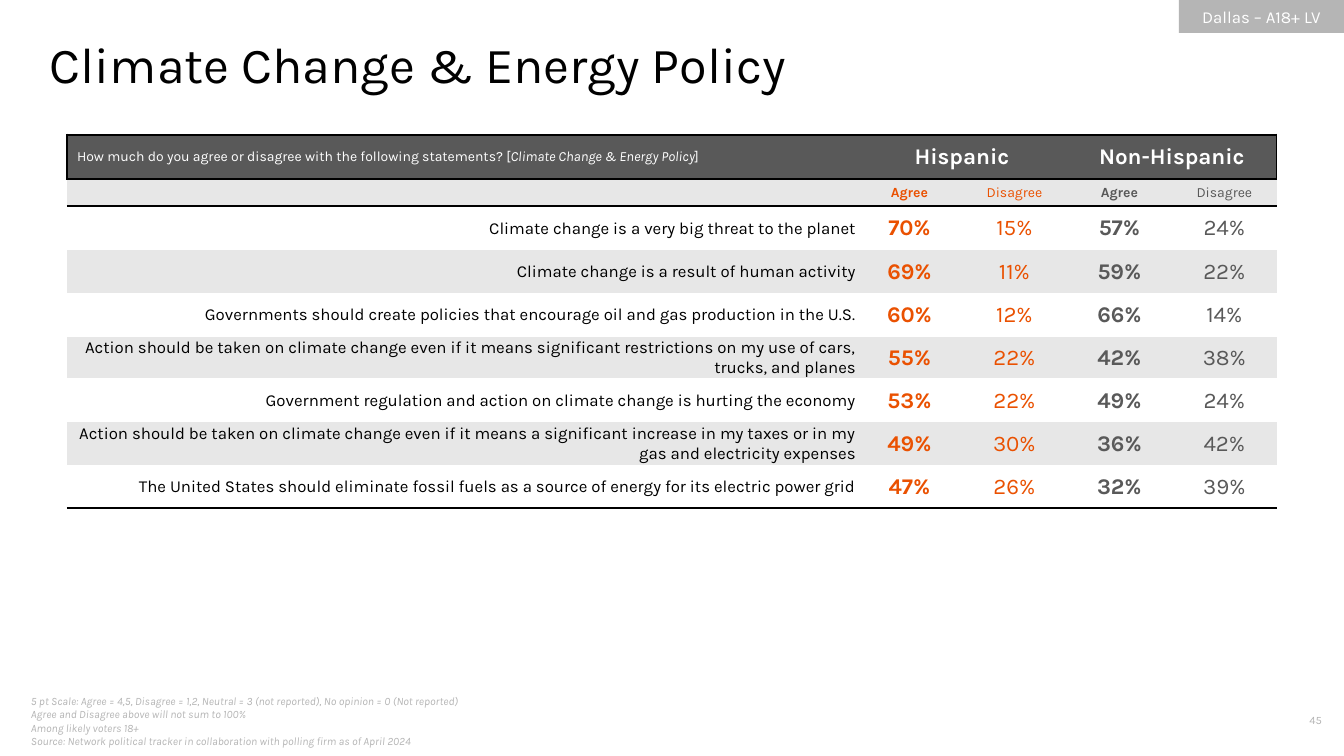
from dataclasses import dataclass
from lxml.etree import SubElement
from pptx import Presentation
from pptx.dml.color import RGBColor
from pptx.enum.shapes import MSO_SHAPE
from pptx.enum.text import MSO_ANCHOR as ANCHOR, PP_ALIGN as ALIGN
from pptx.oxml.ns import qn
from pptx.util import Emu, Pt

TITLE = "Climate Change & Energy Policy"
AUDIENCE = "Dallas – A18+ LV"
PAGE = "45"
NOTES = [
    ["5 pt Scale: Agree = 4,5, Disagree = 1,2, Neutral = 3 (not reported), No opinion = 0 (Not reported)"],
    ["Agree and Disagree above will not sum to 100%"],
    ["Among likely voters 18+",
     "Source: Network political tracker in collaboration with polling firm as of April 2024"],
]
QUESTION = [
    ("How much do you agree or disagree with the following statements? [", False),
    (TITLE, True),
    ("]", False),
]
GROUPS = ["Hispanic", "Non-Hispanic"]
ANSWERS = ["Agree", "Disagree"] * len(GROUPS)
STATEMENTS = [
    ("Climate change is a very big threat to the planet", 70, 15, 57, 24),
    ("Climate change is a result of human activity", 69, 11, 59, 22),
    ("Governments should create policies that encourage oil and gas production in the U.S.", 60, 12, 66, 14),
    ("Action should be taken on climate change even if it means significant restrictions"
     " on my use of cars, trucks, and planes", 55, 22, 42, 38),
    ("Government regulation and action on climate change is hurting the economy", 53, 22, 49, 24),
    ("Action should be taken on climate change even if it means a significant increase"
     " in my taxes or in my gas and electricity expenses", 49, 30, 36, 42),
    ("The United States should eliminate fossil fuels as a source of energy"
     " for its electric power grid", 47, 26, 32, 39),
]

SLIDE_SIZE = (1344, 756)
TITLE_BOX = (50, 33, 1210, 61)
AUDIENCE_BOX = (1179, 0, 165, 33)
NOTES_BOX = (21, 701, 515, 40)
PAGE_BOX = (1243, 708, 89, 27)
TABLE_ORIGIN = (67, 135)
COLUMNS = [790] + [105] * len(ANSWERS)
ROWS = [44, 26, 44, 43, 44, 40, 44, 43, 43]
BODY_MARGIN = 1
NO_GRID_STYLE = "{2D5ABB26-0587-4C30-8999-92F81FD0307C}"


@dataclass(frozen=True)
class Theme:
    font: str = "Karla"
    black: str = "000000"
    white: str = "FFFFFF"
    dark: str = "595959"
    band: str = "E7E7E7"
    muted: str = "B5B5B5"
    accent: str = "EA5101"
    title: int = 36
    figure: int = 16
    label: int = 12
    small: int = 10
    note: int = 8
    rule: float = 2.25
    edge: float = 1


theme = Theme()


def px(length):
    return Emu(round(length * 914400 / 100.8))


def color(value):
    return RGBColor.from_string(value)


def add_run(paragraph, text, size, ink, bold=False, italic=False):
    run = paragraph.add_run()
    run.text = text
    font = run.font
    font.name, font.size = theme.font, Pt(size)
    font.bold, font.italic = bold, italic
    font.color.rgb = color(ink)


def add_text(slide, box, anchor=ANCHOR.TOP):
    frame = slide.shapes.add_textbox(*map(px, box)).text_frame
    frame.word_wrap = True
    frame.vertical_anchor = anchor
    return frame


def style_cell(cell, fill, **borders):
    properties = cell._tc.get_or_add_tcPr()
    for side in "LRTB":
        if side in borders:
            line = SubElement(properties, qn(f"a:ln{side}"), w=str(Pt(borders[side])))
            solid = SubElement(line, qn("a:solidFill"))
            SubElement(solid, qn("a:srgbClr"), val=theme.black)
    cell.fill.solid()
    cell.fill.fore_color.rgb = color(fill)
    cell.vertical_anchor = ANCHOR.MIDDLE


def write_cell(cell, text, size, ink, bold=False, align=ALIGN.CENTER):
    paragraph = cell.text_frame.paragraphs[0]
    paragraph.alignment = align
    add_run(paragraph, text, size, ink, bold)


def answer_style(column):
    return theme.accent if column <= 2 else theme.dark, column % 2 == 1


def add_header(table):
    last = len(COLUMNS) - 1
    for column in range(len(COLUMNS)):
        borders = {"T": theme.rule, "B": theme.rule}
        if column == 0:
            borders["L"] = theme.edge
        if column >= last - 1:
            borders["R"] = theme.edge
        style_cell(table.cell(0, column), theme.dark, **borders)
        style_cell(table.cell(1, column), theme.band, T=theme.rule)
    question = table.cell(0, 0).text_frame.paragraphs[0]
    for text, italic in QUESTION:
        add_run(question, text, theme.small, theme.white, italic=italic)
    for index, group in enumerate(GROUPS):
        first = 1 + 2 * index
        table.cell(0, first).merge(table.cell(0, first + 1))
        write_cell(table.cell(0, first), group, theme.figure, theme.white, True)
    empty = table.cell(1, 0).text_frame.paragraphs[0]
    SubElement(empty._p, qn("a:endParaRPr"), sz=str(theme.small * 100))
    for column, answer in enumerate(ANSWERS, 1):
        write_cell(table.cell(1, column), answer, theme.small, *answer_style(column))


def add_statements(table):
    for index, (statement, *shares) in enumerate(STATEMENTS):
        row = index + 2
        borders = {"B": theme.rule} if row == len(ROWS) - 1 else {}
        for column in range(len(COLUMNS)):
            cell = table.cell(row, column)
            style_cell(cell, theme.band if index % 2 else theme.white, **borders)
            cell.margin_left = cell.margin_right = cell.margin_top = px(BODY_MARGIN)
            cell.margin_bottom = 0
        write_cell(table.cell(row, 0), statement, theme.label, theme.black, align=ALIGN.RIGHT)
        for column, share in enumerate(shares, 1):
            write_cell(table.cell(row, column), f"{share}%", theme.figure, *answer_style(column))


def add_poll_table(slide):
    box = (*TABLE_ORIGIN, sum(COLUMNS), sum(ROWS))
    table = slide.shapes.add_table(len(ROWS), len(COLUMNS), *map(px, box)).table
    table._tbl.tblPr.find(qn("a:tableStyleId")).text = NO_GRID_STYLE
    for column, width in zip(table.columns, COLUMNS):
        column.width = px(width)
    for row, height in zip(table.rows, ROWS):
        row.height = px(height)
    add_header(table)
    add_statements(table)


def add_notes(slide):
    frame = add_text(slide, NOTES_BOX, ANCHOR.MIDDLE)
    for index, lines in enumerate(NOTES):
        paragraph = frame.add_paragraph() if index else frame.paragraphs[0]
        for number, line in enumerate(lines):
            if number:
                paragraph.add_line_break()
            add_run(paragraph, line, theme.note, theme.muted, italic=True)


def main():
    deck = Presentation()
    deck.slide_width, deck.slide_height = map(px, SLIDE_SIZE)
    slide = deck.slides.add_slide(deck.slide_layouts[6])

    add_notes(slide)

    page = add_text(slide, PAGE_BOX).paragraphs[0]
    page.alignment = ALIGN.RIGHT
    add_run(page, PAGE, theme.note, theme.muted)

    audience = slide.shapes.add_shape(MSO_SHAPE.RECTANGLE, *map(px, AUDIENCE_BOX))
    audience.shadow.inherit = False
    audience.fill.solid()
    audience.fill.fore_color.rgb = color(theme.muted)
    audience.line.fill.background()
    audience.text_frame.vertical_anchor = ANCHOR.MIDDLE
    label = audience.text_frame.paragraphs[0]
    label.alignment = ALIGN.CENTER
    add_run(label, AUDIENCE, theme.label, theme.white)

    title = add_text(slide, TITLE_BOX)
    title.margin_left = title.margin_right = title.margin_top = title.margin_bottom = 0
    add_run(title.paragraphs[0], TITLE, theme.title, theme.black)

    add_poll_table(slide)
    deck.save("out.pptx")


if __name__ == "__main__":
    main()
